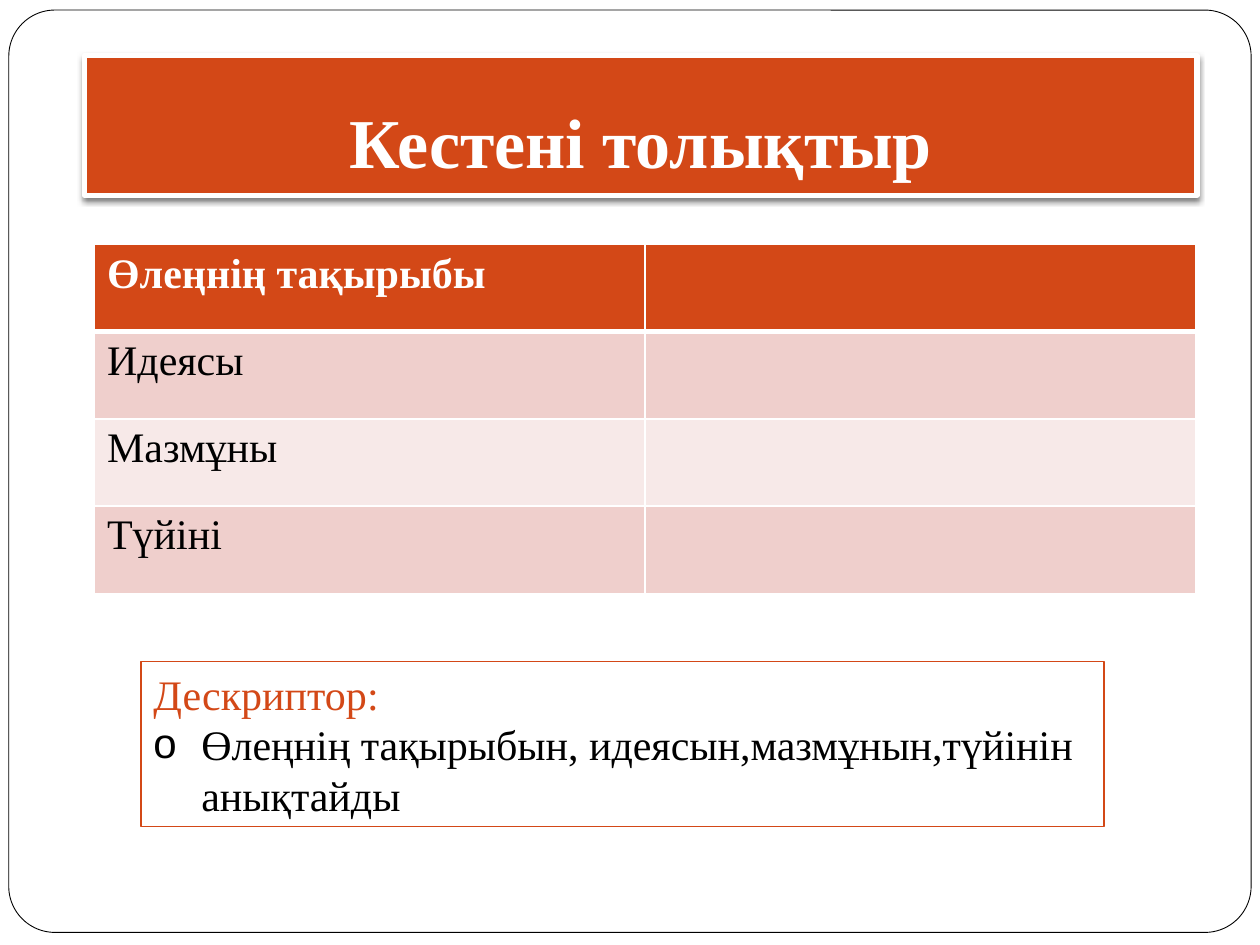
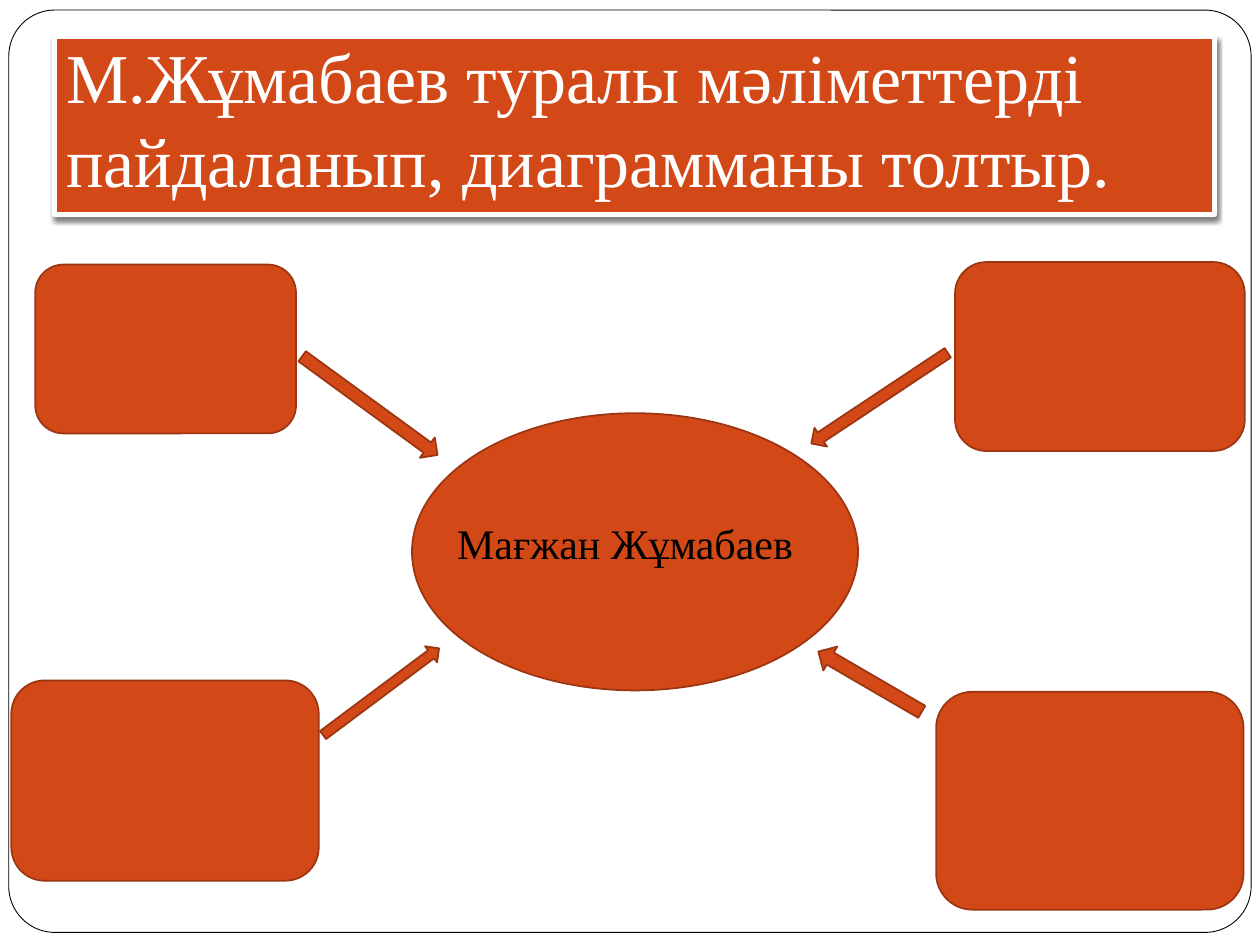
"""Build two Kazakh literature worksheet slides: a table to fill in and a concept diagram."""
from lxml.etree import SubElement
from pptx import Presentation
from pptx.dml.color import RGBColor
from pptx.enum.shapes import MSO_SHAPE
from pptx.enum.text import MSO_ANCHOR, PP_ALIGN
from pptx.oxml.ns import qn
from pptx.util import Inches, Pt

ORANGE = RGBColor(0xD3, 0x48, 0x17)
RUST = RGBColor(0x9C, 0x35, 0x11)
PINK = RGBColor(0xEF, 0xCF, 0xCC)
PALE_PINK = RGBColor(0xF7, 0xE9, 0xE8)
WHITE = RGBColor(0xFF, 0xFF, 0xFF)
BLACK = RGBColor(0, 0, 0)
FONT = "Times New Roman"


def add_figure(slide, preset, place, fill=ORANGE, line=RUST, width=1):
    figure = slide.shapes.add_shape(preset, *map(Inches, place))
    figure.shadow.inherit = False
    figure.fill.solid()
    figure.fill.fore_color.rgb = fill
    figure.line.color.rgb = line
    figure.line.width = Pt(width)
    return figure


def add_words(paragraph, words, color, size=24, bold=False, align=PP_ALIGN.LEFT):
    paragraph.alignment = align
    run = paragraph.add_run()
    run.text = words
    run.font.name = FONT
    run.font.size = Pt(size)
    run.font.bold = bold
    run.font.color.rgb = color


deck = Presentation()
deck.slide_width, deck.slide_height = Inches(10), Inches(7.5)

titles = [
    ("Кестені толықтыр", (0.67, 0.44, 8.83, 1.11), True, PP_ALIGN.CENTER),
    ("М.Жұмабаев туралы мәліметтерді пайдаланып, диаграмманы толтыр.",
     (0.43, 0.29, 9.21, 1.41), False, PP_ALIGN.LEFT),
]
for words, place, bold, align in titles:
    slide = deck.slides.add_slide(deck.slide_layouts[6])
    border = add_figure(slide, MSO_SHAPE.ROUNDED_RECTANGLE, (0.07, 0.08, 9.86, 7.32),
                        WHITE, BLACK, 0.5)
    border.adjustments[0] = 0.05

    banner = add_figure(slide, MSO_SHAPE.RECTANGLE, place, ORANGE, WHITE, 3)
    effects = banner._element.spPr.find(qn("a:effectLst"))
    shadow = SubElement(effects, qn("a:outerShdw"), blurRad=str(Pt(3)), dist=str(Pt(2)),
                        dir="5400000", algn="tl", rotWithShape="0")
    shade = SubElement(shadow, qn("a:srgbClr"), val=str(BLACK))
    SubElement(shade, qn("a:alpha"), val="50000")
    heading = banner.text_frame
    heading.word_wrap = True
    heading.vertical_anchor = MSO_ANCHOR.BOTTOM
    heading.margin_bottom = Inches(0.1)
    add_words(heading.paragraphs[0], words, WHITE, 40, bold, align)

table_slide, diagram_slide = deck.slides

topics = ["Өлеңнің тақырыбы", "Идеясы", "Мазмұны", "Түйіні"]
row_fills = [ORANGE, PINK, PALE_PINK, PINK]
table = table_slide.shapes.add_table(
    len(topics), 2, Inches(0.75), Inches(1.94), Inches(8.74), Inches(2.77)).table
for row, (topic, row_fill) in enumerate(zip(topics, row_fills)):
    for column in range(2):
        cell = table.cell(row, column)
        properties = cell._tc.get_or_add_tcPr()
        for side in "LRTB":
            header_edge = (row, side) in [(0, "B"), (1, "T")]
            edge = SubElement(properties, qn(f"a:ln{side}"), w=str(Pt(3 if header_edge else 1)))
            SubElement(SubElement(edge, qn("a:solidFill")), qn("a:srgbClr"), val=str(WHITE))
        cell.fill.solid()
        cell.fill.fore_color.rgb = row_fill
    is_header = row == 0
    add_words(table.cell(row, 0).text_frame.paragraphs[0], topic,
              WHITE if is_header else BLACK, bold=is_header)

descriptor = add_figure(table_slide, MSO_SHAPE.RECTANGLE, (1.12, 5.25, 7.64, 1.31), WHITE, ORANGE)
criteria = descriptor.text_frame
criteria.word_wrap = True
add_words(criteria.paragraphs[0], "Дескриптор:", ORANGE)
criterion = criteria.add_paragraph()
add_words(criterion, "Өлеңнің тақырыбын, идеясын,мазмұнын,түйінін анықтайды", BLACK)
indent = criterion._p.get_or_add_pPr()
indent.set("marL", str(Inches(0.38)))
indent.set("indent", str(Inches(-0.38)))
SubElement(indent, qn("a:buFont"), typeface="Arial")
SubElement(indent, qn("a:buChar"), char="o")

add_figure(diagram_slide, MSO_SHAPE.OVAL, (3.27, 3.28, 3.54, 2.2))
arrows = [
    ((2.27, 3.12, 1.33, 0.2), 36.1),
    ((6.33, 3.07, 1.3, 0.18), 146.4),
    ((2.45, 5.41, 1.15, 0.16), 323.2),
    ((6.43, 5.3, 0.95, 0.22), 210.2),
]
for place, angle in arrows:
    add_figure(diagram_slide, MSO_SHAPE.RIGHT_ARROW, place).rotation = angle

answers = [
    (0.28, 2.1, 2.07, 1.34),
    (7.58, 2.08, 2.3, 1.5),
    (0.09, 5.4, 2.44, 1.59),
    (7.43, 5.49, 2.44, 1.73),
]
for place in answers:
    add_figure(diagram_slide, MSO_SHAPE.ROUNDED_RECTANGLE, place)

poet = diagram_slide.shapes.add_textbox(Inches(3.53), Inches(4.06), Inches(3.02), Inches(0.5))
poet.text_frame.word_wrap = True
add_words(poet.text_frame.paragraphs[0], "Мағжан Жұмабаев", BLACK)

deck.save("out.pptx")
